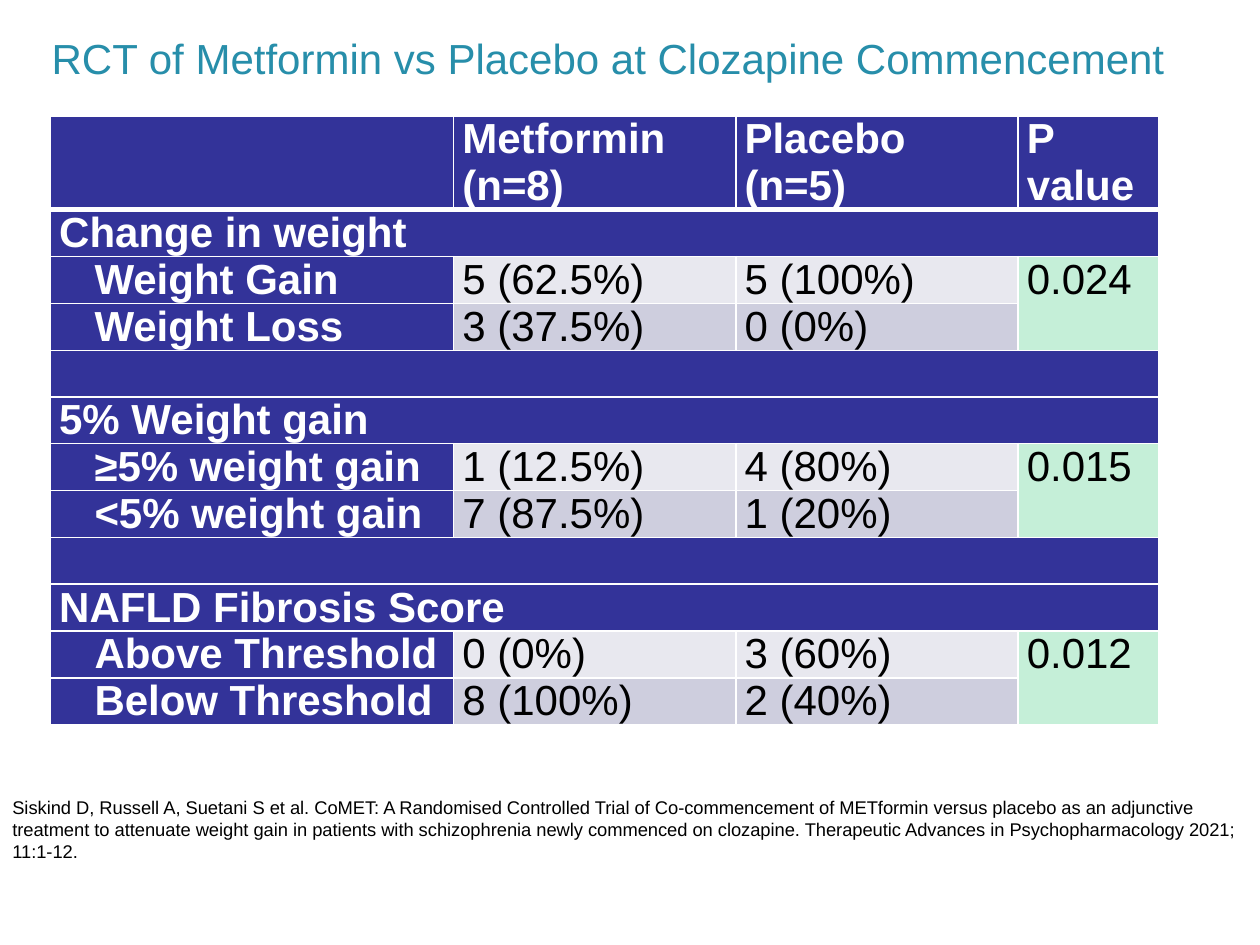
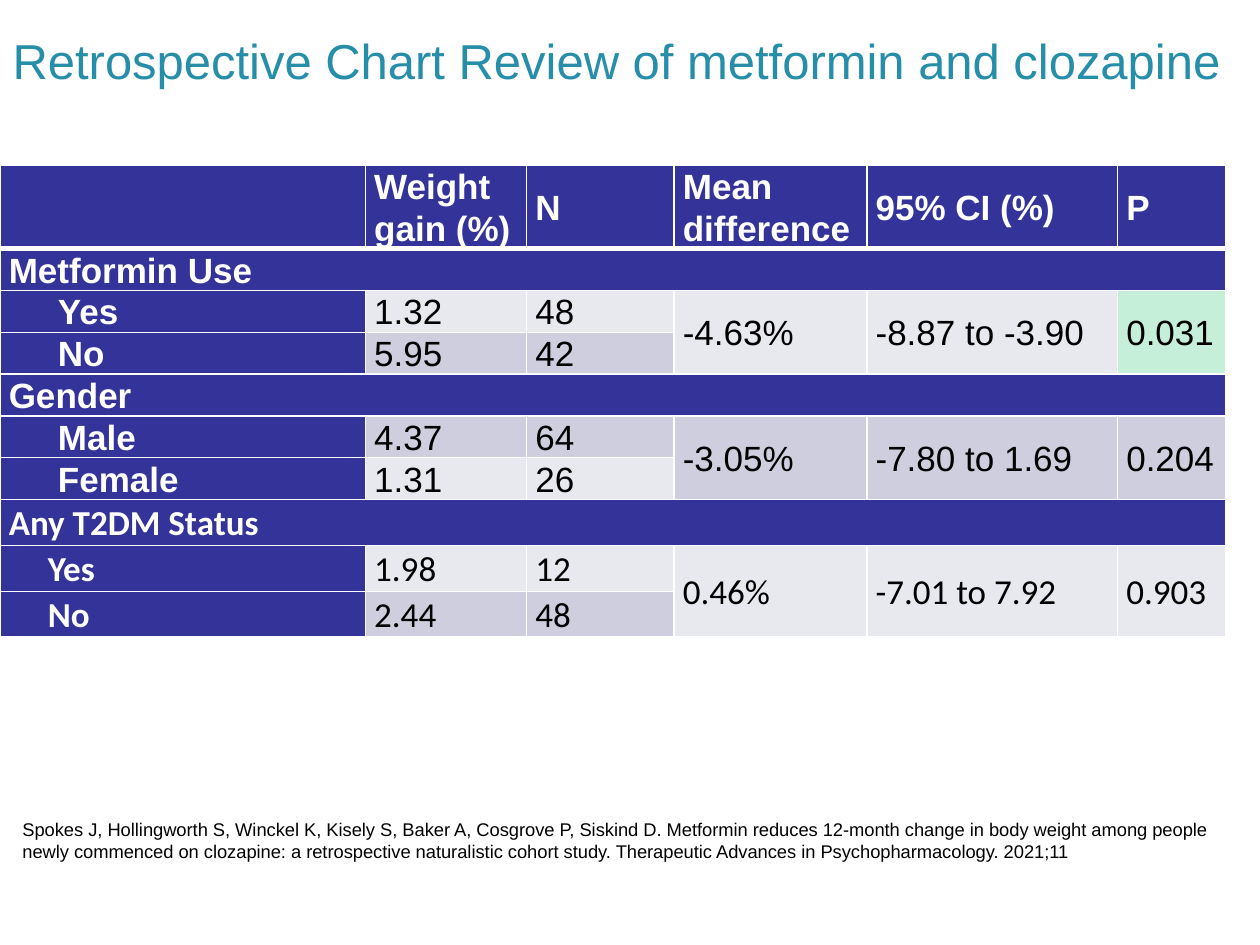
from dataclasses import dataclass

from lxml.etree import SubElement
from pptx import Presentation
from pptx.dml.color import RGBColor
from pptx.enum.text import MSO_ANCHOR, MSO_AUTO_SIZE, PP_ALIGN
from pptx.oxml.ns import qn
from pptx.util import Inches, Pt


@dataclass(frozen=True)
class Theme:
    title: str = "278EAA"
    header: str = "333399"
    pale_band: str = "E8E8EF"
    dark_band: str = "CECEDE"
    significant: str = "C5EFD8"
    white: str = "FFFFFF"
    black: str = "000000"
    font: str = "Arial"
    other_font: str = "Calibri"
    citation_size: float = 10.5
    border: float = 1
    header_border: float = 3
    cell_inset: float = 0.07


theme = Theme()


def write(text_frame, text, size, color, bold=False, font=theme.font, **paragraph_format):
    """Put one formatted run into the first paragraph of a text frame."""
    paragraph = text_frame.paragraphs[0]
    for name, value in paragraph_format.items():
        setattr(paragraph, name, value)
    run = paragraph.add_run()
    run.text = text
    for name, value in {"name": font, "size": Pt(size), "bold": bold}.items():
        setattr(run.font, name, value)
    run.font.color.rgb = RGBColor.from_string(color)


def add_borders(cell, top, bottom):
    """Give a cell white edges; the lines must stand before the fill."""
    properties = cell._tc.get_or_add_tcPr()
    widths = {"lnL": theme.border, "lnR": theme.border, "lnT": top, "lnB": bottom}
    for position, (tag, width) in enumerate(widths.items()):
        line = SubElement(properties, qn(f"a:{tag}"), w=str(Pt(width)))
        fill = SubElement(line, qn("a:solidFill"))
        SubElement(fill, qn("a:srgbClr"), val=theme.white)
        properties.insert(position, line)


# Content: a one-item row is a section band, and a row that stops short
# shares its last columns with the row above
slides = [
    {
        "title": "RCT of Metformin vs Placebo at Clozapine Commencement",
        "title_box": (0.31, 0, 9.18, 0.92),
        "title_size": 24,
        "table_origin": (0.4, 0.92),
        "columns": [3.2, 2.24, 2.24, 1.12],
        "row_heights": [0.74] + [0.37] * 11,
        "table_size": 24,
        "anchor": MSO_ANCHOR.TOP,
        "paragraph_format": {},
        "fonts": [theme.font] * 12,
        "indents": {theme.font: 0.28},
        "rows": [
            ["", "Metformin (n=8)", "Placebo (n=5)", "P value"],
            ["Change in weight"],
            ["Weight Gain", "5 (62.5%)", "5 (100%)", "0.024"],
            ["Weight Loss", "3 (37.5%)", "0 (0%)"],
            [""],
            ["5% Weight gain"],
            ["≥5% weight gain", "1 (12.5%)", "4 (80%)", "0.015"],
            ["<5% weight gain", "7 (87.5%)", "1 (20%)"],
            [""],
            ["NAFLD Fibrosis Score"],
            ["Above Threshold", "0 (0%)", "3 (60%)", "0.012"],
            ["Below Threshold", "8 (100%)", "2 (40%)"],
        ],
        "citation": "Siskind D, Russell A, Suetani S et al. CoMET: A Randomised Controlled "
        "Trial of Co-commencement of METformin versus placebo as an adjunctive treatment to "
        "attenuate weight gain in patients with schizophrenia newly commenced on clozapine. "
        "Therapeutic Advances in Psychopharmacology 2021; 11:1-12.",
        "citation_box": (0, 6.27, 10, 0.63),
    },
    {
        "title": "Retrospective Chart Review of metformin and clozapine",
        "title_box": (0, 0.21, 9.98, 0.53),
        "title_size": 28,
        "table_origin": (0, 1.31),
        "columns": [2.9, 1.28, 1.17, 1.53, 1.99, 0.86],
        "row_heights": [0.66] + [0.33] * 6 + [0.36] * 3,
        "table_size": 20,
        "anchor": MSO_ANCHOR.MIDDLE,
        "paragraph_format": {"line_spacing": 1.07, "space_after": Pt(8)},
        "fonts": [theme.font] * 7 + [theme.other_font] * 3,
        "indents": {theme.font: 0.39, theme.other_font: 0.31},
        "rows": [
            ["", "Weight gain (%)", "N", "Mean difference", "95% CI (%)", "P"],
            ["Metformin Use"],
            ["Yes", "1.32", "48", "-4.63%", "-8.87 to -3.90", "0.031"],
            ["No", "5.95", "42"],
            ["Gender"],
            ["Male", "4.37", "64", "-3.05%", "-7.80 to 1.69", "0.204"],
            ["Female", "1.31", "26"],
            ["Any T2DM Status"],
            ["Yes", "1.98", "12", "0.46%", "-7.01 to 7.92", "0.903"],
            ["No", "2.44", "48"],
        ],
        "citation": "Spokes J, Hollingworth S, Winckel K, Kisely S, Baker A, Cosgrove P, "
        "Siskind D. Metformin reduces 12-month change in body weight among people newly "
        "commenced on clozapine: a retrospective naturalistic cohort study. Therapeutic "
        "Advances in Psychopharmacology. 2021;11",
        "citation_box": (0.08, 6.44, 9.84, 0.45),
    },
]

presentation = Presentation()
presentation.slide_width = Inches(10)
presentation.slide_height = Inches(7.5)

for content in slides:
    slide = presentation.slides.add_slide(presentation.slide_layouts[5])

    # Title
    title = slide.shapes.title
    for name, value in zip(("left", "top", "width", "height"), content["title_box"]):
        setattr(title, name, Inches(value))
    title_format = {
        "word_wrap": True,
        "auto_size": MSO_AUTO_SIZE.NONE,
        "vertical_anchor": MSO_ANCHOR.MIDDLE,
    }
    for name, value in title_format.items():
        setattr(title.text_frame, name, value)
    write(title.text_frame, content["title"], content["title_size"], theme.title,
          alignment=PP_ALIGN.LEFT)

    # Table grid
    rows, columns, heights = content["rows"], content["columns"], content["row_heights"]
    box = (*content["table_origin"], sum(columns), sum(heights))
    table = slide.shapes.add_table(len(rows), len(columns), *map(Inches, box)).table
    table.first_row = table.horz_banding = False
    for column, width in zip(table.columns, columns):
        column.width = Inches(width)
    for row, height in zip(table.rows, heights):
        row.height = Inches(height)

    # Table cells
    for row_index, values in enumerate(rows):
        font = content["fonts"][row_index]
        is_section = len(values) == 1
        is_data = row_index > 0 and not is_section
        is_continued = is_data and len(values) < len(columns)
        source_row = rows[row_index - 1] if is_continued else values
        for column_index in range(len(columns)):
            cell = table.cell(row_index, column_index)
            is_label = column_index == 0
            is_shared = is_continued and column_index >= len(values)

            fill_color = theme.header
            if is_data and not is_label:
                band_row = row_index - 1 if is_shared else row_index
                fill_color = theme.dark_band if band_row % 2 else theme.pale_band
                if column_index == len(columns) - 1 and float(source_row[-1]) < 0.05:
                    fill_color = theme.significant
            cell.fill.solid()
            cell.fill.fore_color.rgb = RGBColor.from_string(fill_color)
            add_borders(
                cell,
                top=theme.header_border if row_index == 1 else theme.border,
                bottom=theme.header_border if row_index == 0 else theme.border,
            )

            indent = content["indents"][font] if is_data and is_label else 0
            cell_format = {
                "margin_left": Inches(theme.cell_inset + indent),
                "margin_right": Inches(theme.cell_inset),
                "margin_top": 0,
                "margin_bottom": 0,
                "vertical_anchor": content["anchor"],
            }
            for name, value in cell_format.items():
                setattr(cell, name, value)

            if column_index < len(values) and values[column_index]:
                is_heading = not is_data or is_label
                write(cell.text_frame, values[column_index], content["table_size"],
                      theme.white if is_heading else theme.black, is_heading, font,
                      **content["paragraph_format"])
            if is_shared:
                table.cell(row_index - 1, column_index).merge(cell)
        if is_section:
            table.cell(row_index, 0).merge(table.cell(row_index, len(columns) - 1))

    # Citation
    citation = slide.shapes.add_textbox(*map(Inches, content["citation_box"]))
    citation.text_frame.word_wrap = True
    citation.text_frame.auto_size = MSO_AUTO_SIZE.SHAPE_TO_FIT_TEXT
    write(citation.text_frame, content["citation"], theme.citation_size, theme.black)

presentation.save("out.pptx")
